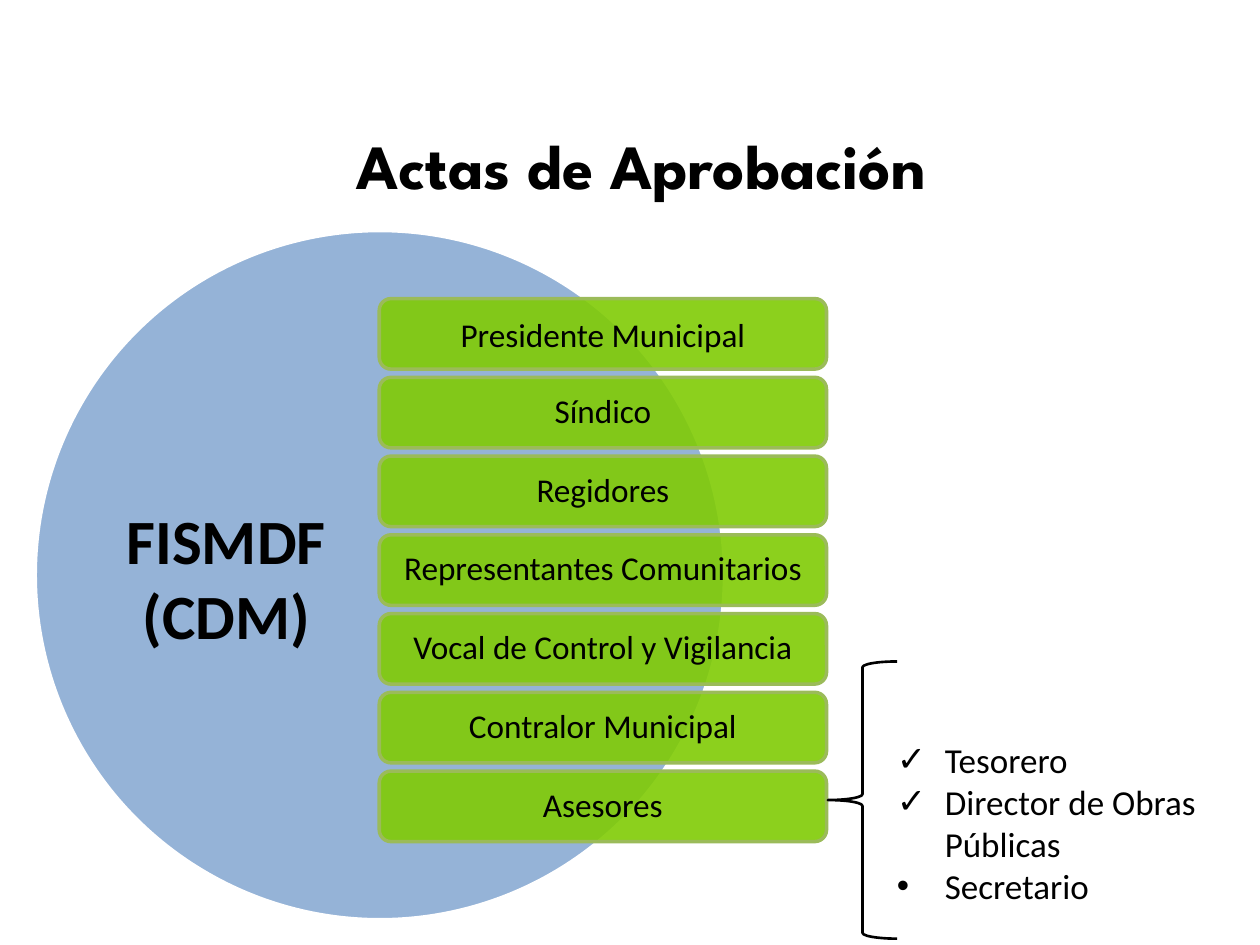
from dataclasses import dataclass

from lxml.etree import SubElement
from pptx import Presentation
from pptx.dml.color import RGBColor
from pptx.enum.shapes import MSO_SHAPE as Preset
from pptx.enum.text import MSO_ANCHOR as Anchor, PP_ALIGN as Align
from pptx.oxml.ns import qn
from pptx.shapes.autoshape import Shape
from pptx.slide import Slide
from pptx.text.text import TextFrame
from pptx.util import Inches, Pt

BLACK = "000000"
ROLE_TOP, ROLE_STEP = 2.37, 0.625


@dataclass
class Box:
    left: float
    top: float
    width: float
    height: float

    def lengths(self) -> list[int]:
        return [Inches(value) for value in (self.left, self.top, self.width, self.height)]


@dataclass
class Role:
    name: str
    line_spacing: float = 0.9


@dataclass
class Adviser:
    name: str
    bullet: str


ROLES = [
    Role("Presidente Municipal", 1.0),
    Role("Síndico"),
    Role("Regidores"),
    Role("Representantes Comunitarios"),
    Role("Vocal de Control y Vigilancia"),
    Role("Contralor Municipal"),
    Role("Asesores"),
]
ADVISERS = [
    Adviser("Tesorero", "✓"),
    Adviser("Director de Obras\vPúblicas", "✓"),
    Adviser("Secretario", "•"),
]


def color(value: str) -> RGBColor:
    return RGBColor.from_string(value)


def style_text(frame: TextFrame, size: float, font: str = "Calibri", bold: bool = False) -> None:
    for paragraph in frame.paragraphs:
        for run in paragraph.runs:
            run.font.name = font
            run.font.size = Pt(size)
            run.font.bold = bold
            run.font.color.rgb = color(BLACK)


def add_outline(slide: Slide, preset: Preset, box: Box, line: str, weight: float,
                fill: str | None = None, opacity: int = 100) -> Shape:
    shape = slide.shapes.add_shape(preset, *box.lengths())
    shape.shadow.inherit = False
    shape.line.color.rgb = color(line)
    shape.line.width = Pt(weight)
    if fill is None:
        shape.fill.background()
        return shape
    shape.fill.solid()
    shape.fill.fore_color.rgb = color(fill)
    if opacity < 100:
        fill_color = shape.element.spPr.find(qn("a:solidFill"))[0]
        SubElement(fill_color, qn("a:alpha"), val=str(opacity * 1000))
    return shape


def add_label(slide: Slide, box: Box, text: str, size: float, font: str = "Calibri",
              anchor: Anchor = Anchor.TOP) -> None:
    frame = slide.shapes.add_textbox(*box.lengths()).text_frame
    frame.word_wrap = True
    frame.vertical_anchor = anchor
    frame.text = text
    for paragraph in frame.paragraphs:
        paragraph.alignment = Align.CENTER
    style_text(frame, size, font, bold=True)


def add_role(slide: Slide, role: Role, top: float) -> None:
    shape = add_outline(slide, Preset.ROUNDED_RECTANGLE, Box(3.01, top, 3.55, 0.56),
                        "9BBB59", 2, "80CB05", 90)
    frame = shape.text_frame
    frame.margin_left = frame.margin_right = Inches(0.1)
    frame.margin_top = frame.margin_bottom = Inches(0.1)
    frame.vertical_anchor = Anchor.MIDDLE
    frame.word_wrap = True
    frame.text = role.name
    paragraph = frame.paragraphs[0]
    paragraph.alignment = Align.CENTER
    paragraph.line_spacing = role.line_spacing
    style_text(frame, 19)


def add_advisers(slide: Slide, box: Box, advisers: list[Adviser]) -> None:
    frame = slide.shapes.add_textbox(*box.lengths()).text_frame
    frame.word_wrap = True
    frame.text = "\n".join(adviser.name for adviser in advisers)
    for adviser, paragraph in zip(advisers, frame.paragraphs):
        properties = paragraph._p.get_or_add_pPr()
        properties.set("marL", str(Inches(0.38)))
        properties.set("indent", str(-Inches(0.38)))
        SubElement(properties, qn("a:buFont"), typeface="Arial")
        SubElement(properties, qn("a:buChar"), char=adviser.bullet)
        paragraph.font.size = Pt(20)
    style_text(frame, 20)


def main() -> None:
    """Build the slide on the approval minutes and the council members."""
    presentation = Presentation()
    presentation.slide_width, presentation.slide_height = Inches(10), Inches(7.5)
    slide = presentation.slides.add_slide(presentation.slide_layouts[6])

    add_label(slide, Box(0.59, 0.68, 9, 1.25), "Actas de Aprobación", 36,
              "League Spartan", Anchor.MIDDLE)
    add_outline(slide, Preset.OVAL, Box(0.28, 1.83, 5.47, 5.47), "FFFFFF", 2, "95B3D7")
    for index, role in enumerate(ROLES):
        add_role(slide, role, ROLE_TOP + index * ROLE_STEP)
    add_label(slide, Box(0.79, 3.93, 2.01, 1.31), "FISMDF\n(CDM)", 36)
    add_outline(slide, Preset.LEFT_BRACE, Box(6.57, 5.25, 0.55, 2.2), BLACK, 1.5)
    add_advisers(slide, Box(7.02, 5.81, 2.66, 1.45), ADVISERS)

    presentation.save("out.pptx")


if __name__ == "__main__":
    main()
